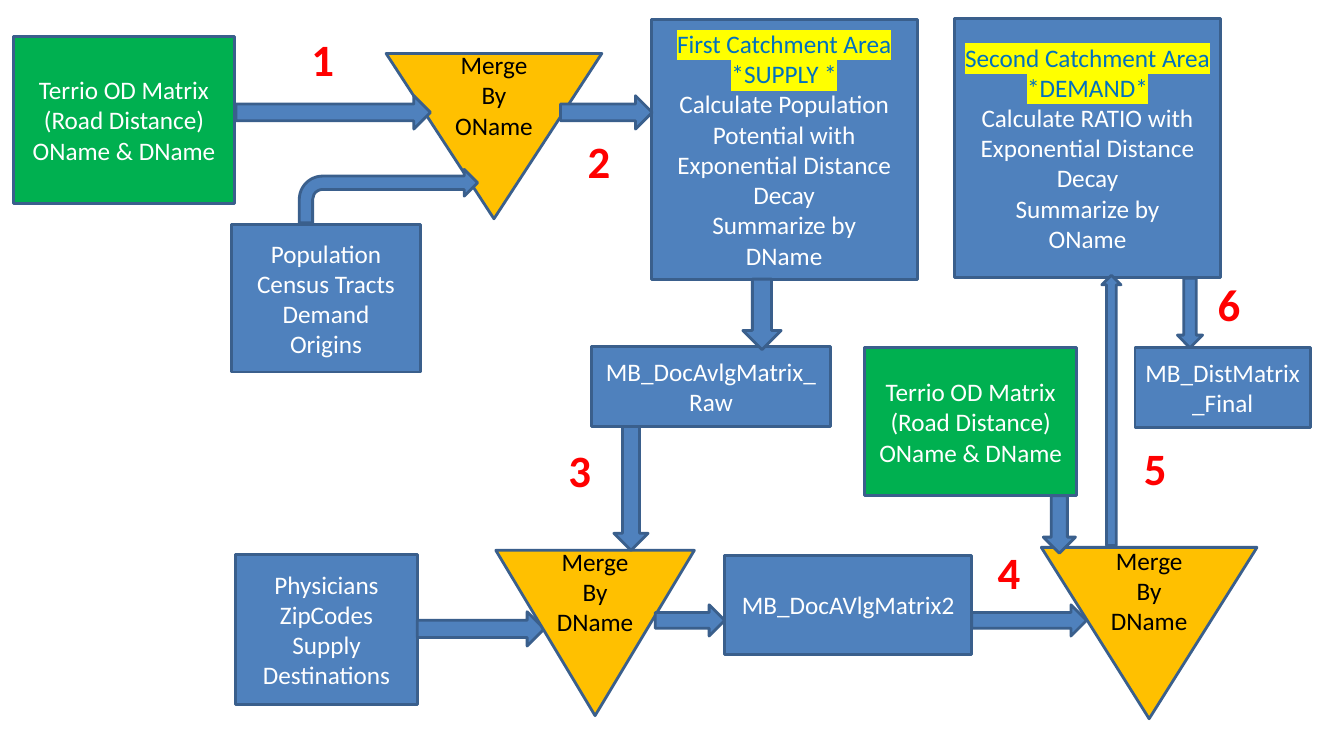
from lxml.etree import SubElement
from pptx import Presentation
from pptx.dml.color import RGBColor
from pptx.enum.shapes import MSO_SHAPE
from pptx.enum.text import MSO_ANCHOR, PP_ALIGN
from pptx.oxml.ns import qn
from pptx.util import Pt

BLUE, GREEN, AMBER, EDGE = "4F81BD", "00B050", "FFC000", "3A5F8C"
WHITE, BLACK, RED = "FFFFFF", "000000", "FF0000"
HEADING, MARKER = "0070C0", "FFFF00"
MATRIX_LINES = ["Terrio OD Matrix", "(Road Distance)", "OName & DName"]


def color(value):
    return RGBColor.from_string(value)


def style(font, size, value, bold=False):
    font.name = "Calibri"
    font.size = Pt(size)
    font.bold = bold
    font.color.rgb = color(value)


def highlight(span):
    style(span.font, 18, HEADING)
    properties = span.font._element
    marker = SubElement(properties, qn("a:highlight"))
    SubElement(marker, qn("a:srgbClr")).set("val", MARKER)
    properties.find(qn("a:solidFill")).addnext(marker)


def add_block(page, kind, origin, box, fill):
    left, top, width, height = box
    block = page.shapes.add_shape(
        kind, Pt(origin[0] + left), Pt(origin[1] + top), Pt(width), Pt(height))
    block.shadow.inherit = False
    block.fill.solid()
    block.fill.fore_color.rgb = color(fill)
    block.line.color.rgb = color(EDGE)
    block.line.width = Pt(2)
    return block


def write_lines(block, lines, value, marked=0):
    frame = block.text_frame
    frame.word_wrap = True
    frame.vertical_anchor = MSO_ANCHOR.MIDDLE
    for index, line in enumerate(lines):
        para = frame.paragraphs[0] if index == 0 else frame.add_paragraph()
        para.alignment = PP_ALIGN.CENTER
        style(para.font, 18, HEADING if index < marked else value)
        span = para.add_run()
        span.text = line
        if index < marked:
            highlight(span)


def add_process(page, origin, box, lines, fill=BLUE, marked=0):
    block = add_block(page, MSO_SHAPE.FLOWCHART_PROCESS, origin, box, fill)
    write_lines(block, lines, WHITE, marked)


def add_merge(page, origin, box, key):
    block = add_block(page, MSO_SHAPE.FLOWCHART_MERGE, origin, box, AMBER)
    write_lines(block, ["Merge", "By", key], BLACK)


def add_arrow(page, kind, origin, box):
    add_block(page, kind, origin, box, BLUE)


def add_step(page, origin, number, left, top):
    label = page.shapes.add_textbox(
        Pt(origin[0] + left), Pt(origin[1] + top), Pt(31), Pt(46))
    label.text_frame.word_wrap = False
    para = label.text_frame.paragraphs[0]
    para.text = str(number)
    style(para.font, 32, RED, bold=True)


def draw_physicians(page, origin):
    add_process(page, origin, (0, 2.9, 129.6, 107.3),
                ["Physicians", "ZipCodes", "Supply", "Destinations"])
    add_arrow(page, MSO_SHAPE.RIGHT_ARROW, origin, (129.6, 43.9, 90.7, 24.5))
    add_merge(page, origin, (185.7, 0, 141.8, 118.1), "DName")
    add_process(page, origin, (349.2, 3.6, 176.4, 70.6), ["MB_DocAVlgMatrix2"])
    add_arrow(page, MSO_SHAPE.RIGHT_ARROW, origin, (299.5, 38.9, 49.7, 22.3))


def draw_supply(page, origin):
    add_process(page, origin, (66.2, 0, 190.1, 185.8), [
        "First Catchment Area", "*SUPPLY *",
        "Calculate Population Potential with Exponential Distance Decay",
        "Summarize by", "DName"], marked=2)
    add_process(page, origin, (23.7, 234, 170.6, 56.9), ["MB_DocAvlgMatrix_Raw"])
    add_arrow(page, MSO_SHAPE.DOWN_ARROW, origin, (131.7, 185.7, 27.4, 50.4))
    add_arrow(page, MSO_SHAPE.DOWN_ARROW, origin, (39.6, 290.9, 24.5, 88.6))
    add_step(page, origin, 3, 0, 298.8)


def draw_population(page, origin):
    add_process(page, origin, (0, 6.5, 158.4, 119.5), MATRIX_LINES, GREEN)
    add_process(page, origin, (156.2, 141.2, 134.6, 105.1),
                ["Population", "Census Tracts", "Demand", "Origins"])
    add_merge(page, origin, (266.4, 18.8, 154.1, 118.1), "OName")
    add_arrow(page, MSO_SHAPE.BENT_ARROW, origin, (204.4, 101.6, 127.4, 38.2))
    add_arrow(page, MSO_SHAPE.RIGHT_ARROW, origin, (159.1, 49, 139, 23.8))
    add_arrow(page, MSO_SHAPE.RIGHT_ARROW, origin, (390.9, 49, 65.5, 23.8))
    add_step(page, origin, 1, 205.9, 0)
    add_step(page, origin, 2, 403.2, 72.8)


def draw_demand(page, origin):
    add_process(page, origin, (64, 0, 190, 185), [
        "Second Catchment Area", "*DEMAND*", "Calculate RATIO with",
        "Exponential Distance", "Decay", "Summarize by", "OName"], marked=2)
    add_process(page, origin, (0, 235.4, 151.2, 105.8), MATRIX_LINES, GREEN)
    add_process(page, origin, (192.9, 235.4, 125.3, 56.9), ["MB_DistMatrix_Final"])
    add_merge(page, origin, (126, 378, 154.1, 122.4), "DName")
    add_arrow(page, MSO_SHAPE.RIGHT_ARROW, origin, (76.3, 419, 82.1, 22.3))
    add_arrow(page, MSO_SHAPE.DOWN_ARROW, origin, (127.4, 341.2, 23, 41))
    add_arrow(page, MSO_SHAPE.UP_ARROW, origin, (169.2, 183.6, 13.7, 193))
    add_arrow(page, MSO_SHAPE.DOWN_ARROW, origin, (223.2, 185.7, 18, 49.7))
    add_step(page, origin, 4, 87.8, 372.2)
    add_step(page, origin, 5, 192.2, 298)
    add_step(page, origin, 6, 244.8, 181.4)


def main():
    deck = Presentation()
    deck.slide_width, deck.slide_height = Pt(960), Pt(540)
    page = deck.slides.add_slide(deck.slide_layouts[6])
    draw_physicians(page, (168.5, 393.1))
    draw_supply(page, (398.9, 13.7))
    draw_population(page, (9.4, 19.4))
    draw_demand(page, (617.8, 13))
    deck.save("out.pptx")


if __name__ == "__main__":
    main()
